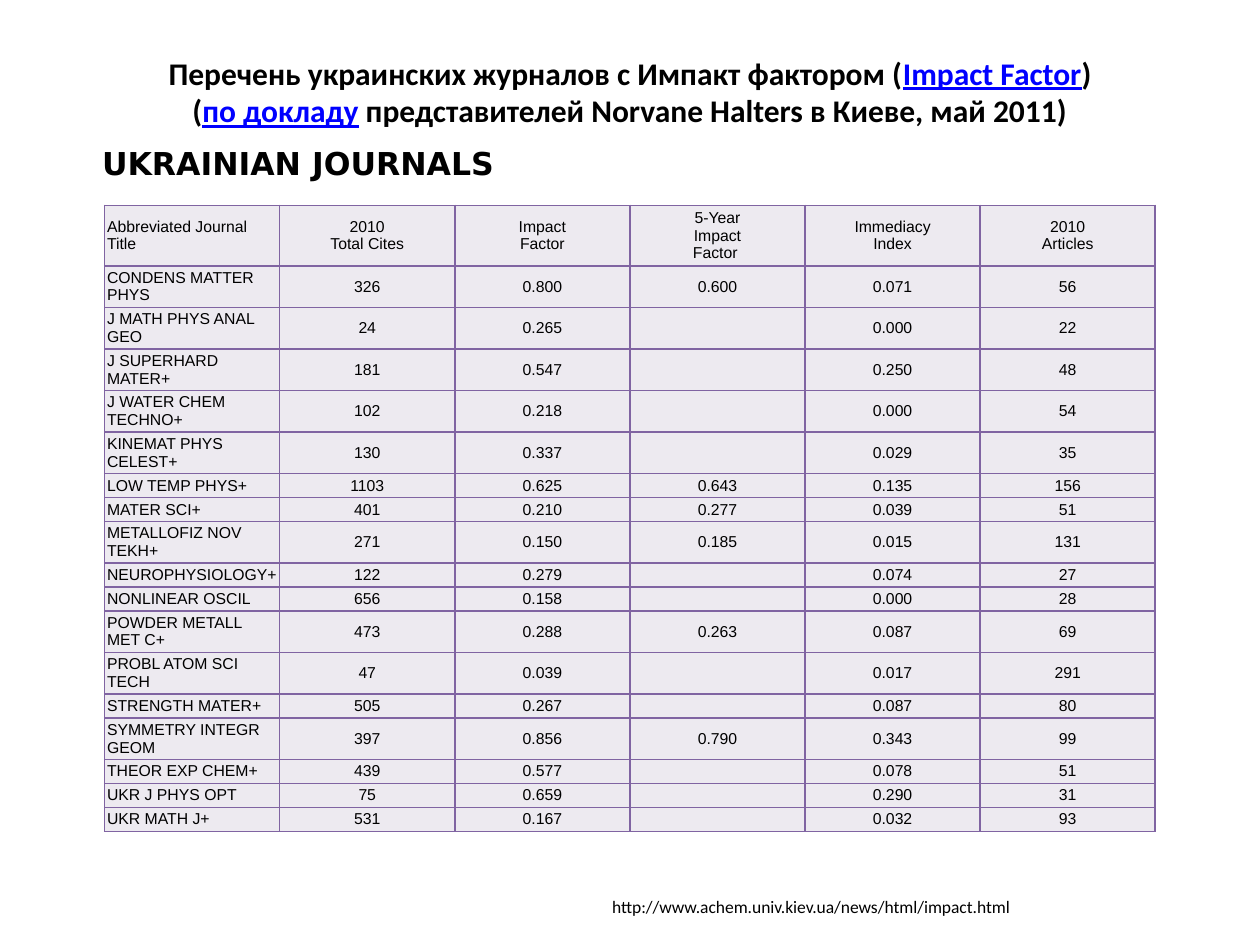
import dataclasses
import typing

import lxml.etree
import pptx
import pptx.dml.color
import pptx.enum.text
import pptx.oxml.ns
import pptx.util

Inches = pptx.util.Inches
Pt = pptx.util.Pt
RGBColor = pptx.dml.color.RGBColor
Align = pptx.enum.text.PP_ALIGN
Anchor = pptx.enum.text.MSO_ANCHOR
qn = pptx.oxml.ns.qn

BLACK = RGBColor(0x00, 0x00, 0x00)
LINK_BLUE = RGBColor(0x00, 0x00, 0xFF)
BORDER_PURPLE = RGBColor(0x80, 0x64, 0xA2)
CELL_LILAC = RGBColor(0xED, 0xEA, 0xF0)

COLUMN_WIDTH = 1.39
HEADER_HEIGHT = 0.48
ONE_LINE_HEIGHT = 0.19
TWO_LINE_HEIGHT = 0.33
LONGEST_ONE_LINE_NAME = 16


@dataclasses.dataclass(frozen=True)
class TextStyle:
    font: str
    size: float
    bold: bool = False


@dataclasses.dataclass(frozen=True)
class TitlePart:
    text: str
    linked: bool = False


class Journal(typing.NamedTuple):
    name: str
    cites: str
    impact: str
    five_year_impact: str
    immediacy: str
    articles: str


TITLE_STYLE = TextStyle("Calibri", 18, True)
HEADING_STYLE = TextStyle("DejaVu Sans", 18, True)
CELL_STYLE = TextStyle("Arial", 9)
SOURCE_STYLE = TextStyle("Calibri", 10)

TITLE_PARTS = (
    TitlePart("Перечень украинских журналов с Импакт фактором ("),
    TitlePart("Impact Factor", True),
    TitlePart(")\n("),
    TitlePart("по докладу", True),
    TitlePart(" представителей Norvane Halters в Киеве, май 2011)"),
)

HEADER = Journal(
    "Abbreviated Journal Title", "2010\nTotal Cites", "Impact\nFactor",
    "5-Year\nImpact\nFactor ", "Immediacy\nIndex", "2010\nArticles",
)

JOURNALS = (
    Journal("CONDENS MATTER PHYS", "326", "0.800", "0.600", "0.071", "56"),
    Journal("J MATH PHYS ANAL GEO", "24", "0.265", "", "0.000", "22"),
    Journal("J SUPERHARD MATER+", "181", "0.547", "", "0.250", "48"),
    Journal("J WATER CHEM TECHNO+", "102", "0.218", "", "0.000", "54"),
    Journal("KINEMAT PHYS CELEST+", "130", "0.337", "", "0.029", "35"),
    Journal("LOW TEMP PHYS+", "1103", "0.625", "0.643", "0.135", "156"),
    Journal("MATER SCI+", "401", "0.210", "0.277", "0.039", "51"),
    Journal("METALLOFIZ NOV TEKH+", "271", "0.150", "0.185", "0.015", "131"),
    Journal("NEUROPHYSIOLOGY+", "122", "0.279", "", "0.074", "27"),
    Journal("NONLINEAR OSCIL", "656", "0.158", "", "0.000", "28"),
    Journal("POWDER METALL MET C+", "473", "0.288", "0.263", "0.087", "69"),
    Journal("PROBL ATOM SCI TECH", "47", "0.039", "", "0.017", "291"),
    Journal("STRENGTH MATER+", "505", "0.267", "", "0.087", "80"),
    Journal("SYMMETRY INTEGR GEOM", "397", "0.856", "0.790", "0.343", "99"),
    Journal("THEOR EXP CHEM+", "439", "0.577", "", "0.078", "51"),
    Journal("UKR J PHYS OPT", "75", "0.659", "", "0.290", "31"),
    Journal("UKR MATH J+", "531", "0.167", "", "0.032", "93"),
)


def style_font(font, style: TextStyle) -> None:
    font.name = style.font
    font.size = Pt(style.size)
    font.bold = style.bold
    font.color.rgb = BLACK


def write_title(slide) -> None:
    title = slide.shapes.title
    title.left, title.top = Inches(0.5), Inches(0.3)
    title.width, title.height = Inches(9), Inches(0.85)
    title.text_frame.vertical_anchor = Anchor.MIDDLE
    paragraph = title.text_frame.paragraphs[0]
    paragraph.alignment = Align.CENTER
    for part in TITLE_PARTS:
        for index, line in enumerate(part.text.split("\n")):
            if index:
                paragraph.add_line_break()
            run = paragraph.add_run()
            run.text = line
            style_font(run.font, TITLE_STYLE)
            if part.linked:
                run.font.color.rgb = LINK_BLUE
                run.font.underline = True


def add_plain_table(slide, rows: int, columns: int, left: float, top: float,
                    width: float, height: float):
    table = slide.shapes.add_table(
        rows, columns, Inches(left), Inches(top), Inches(width), Inches(height)
    ).table
    table.first_row = False
    table.horz_banding = False
    return table


def write_cell(cell, text: str, style: TextStyle, inset: float,
               alignment: Align = Align.LEFT) -> None:
    cell.margin_left = cell.margin_right = Inches(inset)
    cell.margin_top = cell.margin_bottom = Inches(inset)
    cell.vertical_anchor = Anchor.MIDDLE
    paragraph = cell.text_frame.paragraphs[0]
    paragraph.alignment = alignment
    style_font(paragraph.font, style)
    if text:
        paragraph.text = text
    else:
        lxml.etree.SubElement(paragraph._p, qn("a:endParaRPr"), sz=str(int(style.size * 100)))


def outline_cell(cell) -> None:
    properties = cell._tc.get_or_add_tcPr()
    for side in ("a:lnL", "a:lnR", "a:lnT", "a:lnB"):
        line = lxml.etree.SubElement(properties, qn(side), w=str(Pt(1)))
        fill = lxml.etree.SubElement(line, qn("a:solidFill"))
        lxml.etree.SubElement(fill, qn("a:srgbClr"), val=str(BORDER_PURPLE))


def row_height(journal: Journal) -> float:
    if journal is HEADER:
        return HEADER_HEIGHT
    return TWO_LINE_HEIGHT if len(journal.name) > LONGEST_ONE_LINE_NAME else ONE_LINE_HEIGHT


def add_heading(slide) -> None:
    cell = add_plain_table(slide, 1, 1, 0.8, 1.15, 3.46, 0.32).cell(0, 0)
    write_cell(cell, "UKRAINIAN JOURNALS", HEADING_STYLE, 0.01)
    cell.fill.background()


def add_journals(slide) -> None:
    records = (HEADER, *JOURNALS)
    heights = [row_height(record) for record in records]
    table = add_plain_table(slide, len(records), len(HEADER), 0.83, 1.63,
                            COLUMN_WIDTH * len(HEADER), sum(heights))
    for column in table.columns:
        column.width = Inches(COLUMN_WIDTH)
    for row, record, height in zip(table.rows, records, heights):
        row.height = Inches(height)
        for index, (cell, value) in enumerate(zip(row.cells, record)):
            write_cell(cell, value, CELL_STYLE, 0.02, Align.CENTER if index else Align.LEFT)
            outline_cell(cell)
            cell.fill.solid()
            cell.fill.fore_color.rgb = CELL_LILAC


def add_source(slide) -> None:
    source = slide.shapes.add_textbox(Inches(4.76), Inches(7.06), Inches(5), Inches(0.27))
    source.text_frame.word_wrap = True
    source.text_frame.auto_size = pptx.enum.text.MSO_AUTO_SIZE.SHAPE_TO_FIT_TEXT
    paragraph = source.text_frame.paragraphs[0]
    paragraph.text = "http://www.achem.univ.kiev.ua/news/html/impact.html"
    style_font(paragraph.font, SOURCE_STYLE)


def main() -> None:
    presentation = pptx.Presentation()
    presentation.slide_width, presentation.slide_height = Inches(10), Inches(7.5)
    slide = presentation.slides.add_slide(presentation.slide_layouts[5])
    write_title(slide)
    add_heading(slide)
    add_journals(slide)
    add_source(slide)
    presentation.save("out.pptx")


if __name__ == "__main__":
    main()
